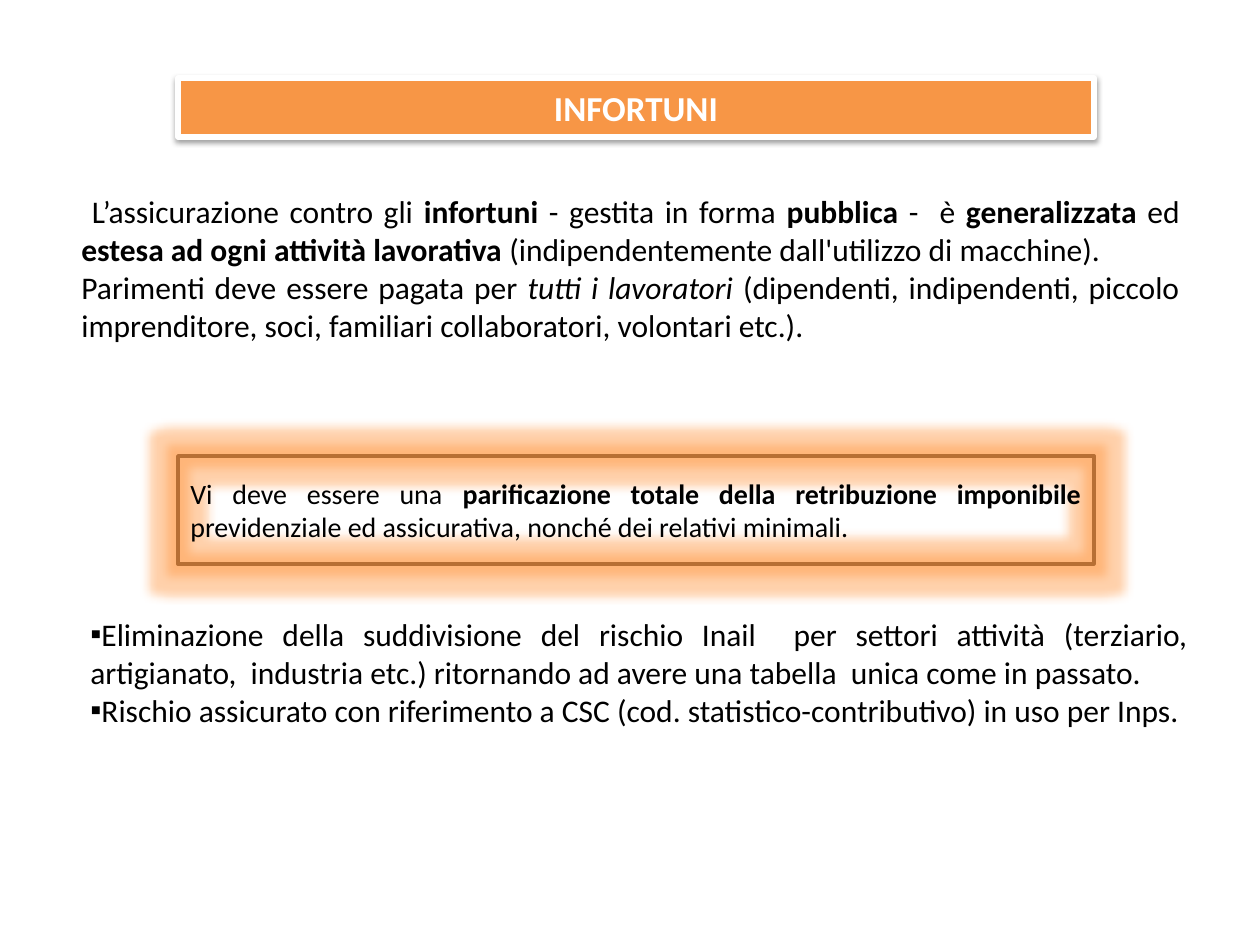
"""Build the INFORTUNI slide: a title banner, two text blocks and a glowing callout."""
from lxml import etree
from pptx import Presentation
from pptx import util as u
from pptx.dml.color import RGBColor
from pptx.enum import shapes, text
from pptx.oxml.ns import qn

PX_PER_INCH = 126
JUSTIFY, CENTER = text.PP_ALIGN.JUSTIFY, text.PP_ALIGN.CENTER
MIDDLE, TOP = text.MSO_ANCHOR.MIDDLE, text.MSO_ANCHOR.TOP

TITLE = [[("INFORTUNI", "b")]]
INSURANCE = [
    [(" L’assicurazione contro gli ", ""), ("infortuni", "b"),
     (" - gestita in forma ", ""), ("pubblica", "b"), (" -  è ", ""),
     ("generalizzata ", "b"), ("ed ", ""),
     ("estesa ad ogni attività lavorativa", "b"),
     (" (indipendentemente dall'utilizzo di macchine). ", "")],
    [("Parimenti deve essere pagata per ", ""), ("tutti i lavoratori ", "i"),
     ("(dipendenti, indipendenti, piccolo imprenditore, soci, "
      "familiari collaboratori, volontari etc.). ", "")],
]
PARITY = [[("Vi deve essere una ", ""),
           ("parificazione totale della retribuzione imponibile", "b"),
           (" previdenziale ed assicurativa, nonché dei relativi minimali.", "")]]
PROPOSALS = [
    [("Eliminazione della suddivisione del rischio Inail  per settori attività "
      "(terziario, artigianato,  industria etc.) ritornando ad avere una tabella  "
      "unica come in passato.", "")],
    [("Rischio assicurato con riferimento a CSC (cod. statistico-contributivo) "
      "in uso per Inps.", "")],
]
SHADOW = ("outerShdw", {"blurRad": 40000, "dist": 20000, "dir": 5400000, "rotWithShape": 0},
          "000000", 38000)
GLOW = ("glow", {"rad": 139700}, "FF8D2F", 40000)

BANNERS = [
    {"at": (178, 78, 916, 59), "words": TITLE, "size": 20, "ink": "FFFFFF", "align": CENTER,
     "fill": "F79646", "edge": "FFFFFF", "weight": 3, "effect": SHADOW},
    {"at": (178, 456, 916, 108), "words": PARITY, "size": 16, "ink": "000000", "align": JUSTIFY,
     "fill": None, "edge": "B76F34", "weight": 2, "effect": GLOW},
]
PASSAGES = [((69, 186, 1123, 204), INSURANCE, None),
            ((78, 609, 1123, 165), PROPOSALS, "▪")]


def px(length):
    return u.Inches(length / PX_PER_INCH)


def colour(value):
    return RGBColor.from_string(value)


def add_child(parent, tag, **values):
    return etree.SubElement(parent, qn(f"a:{tag}"), {k: str(v) for k, v in values.items()})


def write(frame, paragraphs, size, ink, align, anchor, bullet=None):
    for name, value in {"word_wrap": True, "vertical_anchor": anchor}.items():
        setattr(frame, name, value)
    for index, runs in enumerate(paragraphs):
        paragraph = frame.add_paragraph() if index else frame.paragraphs[0]
        paragraph.alignment = align
        if bullet:
            properties = paragraph._p.get_or_add_pPr()
            add_child(properties, "buFont", typeface="Arial")
            add_child(properties, "buChar", char=bullet)
        for words, style in runs:
            run = paragraph.add_run()
            run.text = words
            look = {"name": "Calibri", "size": u.Pt(size),
                    "bold": style == "b", "italic": style == "i"}
            for name, value in look.items():
                setattr(run.font, name, value)
            run.font.color.rgb = colour(ink)


def add_banner(slide, at, words, size, ink, align, fill, edge, weight, effect):
    banner = slide.shapes.add_shape(shapes.MSO_SHAPE.RECTANGLE, *map(px, at))
    if fill:
        banner.fill.solid()
        banner.fill.fore_color.rgb = colour(fill)
    else:
        banner.fill.background()
    banner.line.color.rgb = colour(edge)
    banner.line.width = u.Pt(weight)
    banner.shadow.inherit = False
    kind, values, tint, alpha = effect
    effects = banner._element.spPr.find(qn("a:effectLst"))
    add_child(add_child(add_child(effects, kind, **values), "srgbClr", val=tint),
              "alpha", val=alpha)
    write(banner.text_frame, words, size, ink, align, MIDDLE)


def main():
    deck = Presentation()
    deck.slide_width, deck.slide_height = u.Inches(10), u.Inches(7.5)
    slide = deck.slides.add_slide(deck.slide_layouts[6])
    for banner in BANNERS:
        add_banner(slide, **banner)
    for at, words, bullet in PASSAGES:
        passage = slide.shapes.add_textbox(*map(px, at))
        write(passage.text_frame, words, 18, "000000", JUSTIFY, TOP, bullet)
        passage.text_frame.auto_size = text.MSO_AUTO_SIZE.SHAPE_TO_FIT_TEXT
    deck.save("out.pptx")


if __name__ == "__main__":
    main()
